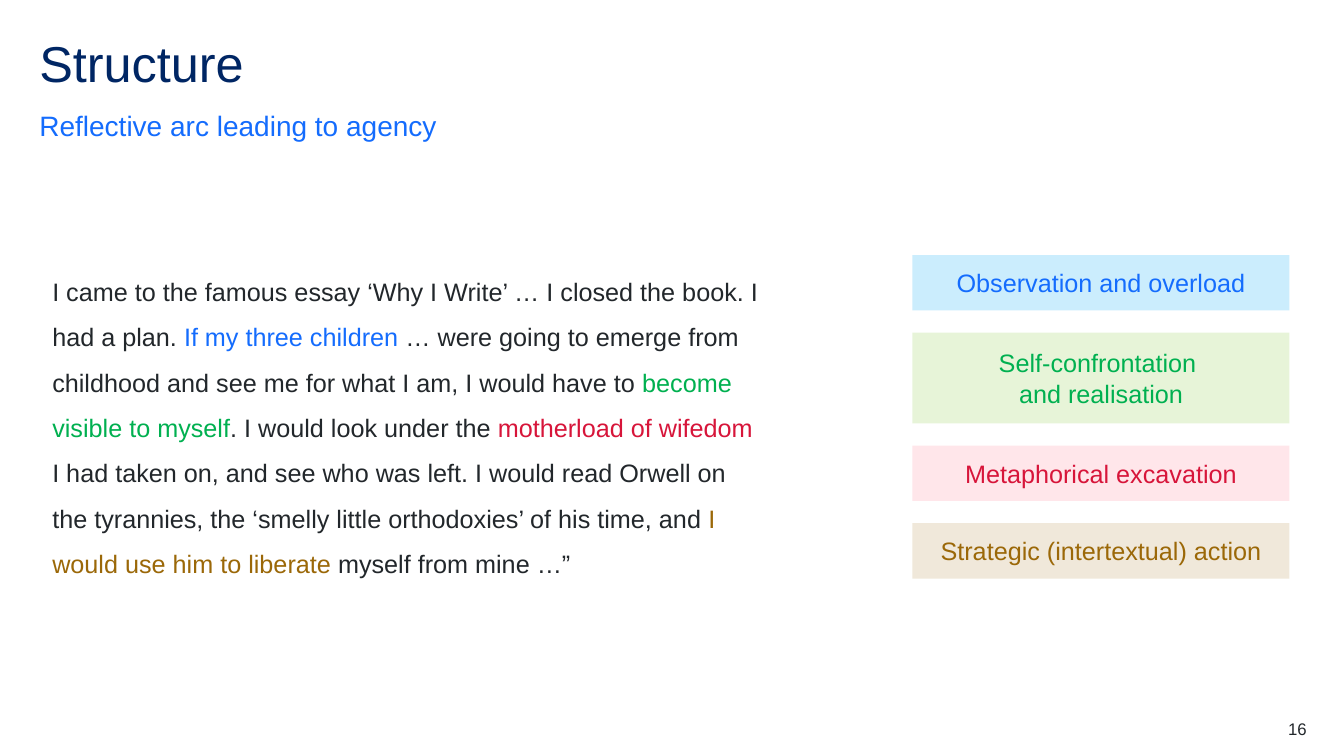
from pptx import Presentation
from pptx.dml.color import RGBColor
from pptx.enum.shapes import MSO_SHAPE
from pptx.enum.text import MSO_ANCHOR, PP_ALIGN
from pptx.oxml.ns import qn
from pptx.util import Inches, Pt
from lxml import etree

RECTANGLE = MSO_SHAPE.RECTANGLE
TOP, MIDDLE, BOTTOM = MSO_ANCHOR.TOP, MSO_ANCHOR.MIDDLE, MSO_ANCHOR.BOTTOM
LEFT, CENTER, RIGHT = PP_ALIGN.LEFT, PP_ALIGN.CENTER, PP_ALIGN.RIGHT

NAVY, INK = "002664", "22272B"
BLUE, GREEN, RED, BROWN = "146CFD", "00B050", "D7153A", "9B6808"


def rgb(value):
    return RGBColor.from_string(value)


class StructureSlide:
    font = "Arial"

    def __init__(self, presentation):
        self.slide = presentation.slides.add_slide(presentation.slide_layouts[5])

    def style_runs(self, paragraph, size, colors):
        for run, color in zip(paragraph.runs, colors):
            run.font.name = self.font
            run.font.size = Pt(size)
            run.font.bold = False
            run.font.color.rgb = rgb(color)

    def frame(self, shape, anchor, inset):
        frame = shape.text_frame
        frame.word_wrap = True
        frame.vertical_anchor = anchor
        if not inset:
            frame.margin_left = frame.margin_right = 0
            frame.margin_top = frame.margin_bottom = 0
        return frame

    def title(self, text, left, top, width, height):
        heading = self.slide.shapes.title
        heading.left, heading.top = Inches(left), Inches(top)
        heading.width, heading.height = Inches(width), Inches(height)
        frame = self.frame(heading, TOP, False)
        frame.text = text
        paragraph = frame.paragraphs[0]
        paragraph.alignment = LEFT
        paragraph.line_spacing = 0.9
        self.style_runs(paragraph, 36, [NAVY])

    def text(self, parts, left, top, width, height, size, anchor=TOP,
             align=LEFT, spacing=1.0, after=0, inset=False):
        box = self.slide.shapes.add_textbox(
            Inches(left), Inches(top), Inches(width), Inches(height))
        paragraph = self.frame(box, anchor, inset).paragraphs[0]
        paragraph.alignment = align
        paragraph.line_spacing = spacing
        paragraph.space_after = Pt(after)
        for words, _ in parts:
            paragraph.add_run().text = words
        self.style_runs(paragraph, size, [color for _, color in parts])

    def label(self, text, color, fill, opacity, left, top, width, height):
        card = self.slide.shapes.add_shape(
            RECTANGLE, Inches(left), Inches(top), Inches(width), Inches(height))
        card.shadow.inherit = False
        card.line.fill.background()
        card.fill.solid()
        card.fill.fore_color.rgb = rgb(fill)
        if opacity < 100:
            tint = card.fill._xPr.find(".//" + qn("a:srgbClr"))
            etree.SubElement(tint, qn("a:alpha")).set("val", str(opacity * 1000))
        frame = self.frame(card, MIDDLE, True)
        frame.text = text
        paragraph = frame.paragraphs[0]
        paragraph.alignment = CENTER
        self.style_runs(paragraph, 18, [color] * len(paragraph.runs))


def main():
    presentation = Presentation()
    presentation.slide_width = Inches(13.33)
    presentation.slide_height = Inches(7.5)
    structure = StructureSlide(presentation)

    structure.title("Structure", 0.39, 0.39, 12.56, 0.6)
    structure.text([("Reflective arc leading to agency", BLUE)],
                   0.39, 1.07, 12.56, 0.34, 20, anchor=BOTTOM, spacing=1.5, after=12)

    quotation = [
        ("I came to the famous essay ‘Why I Write’ … I closed the book. I had a plan. ", INK),
        ("If my three children ", BLUE),
        ("… were going to emerge from childhood and see me for what I am, "
         "I would have to ", INK),
        ("become visible to myself", GREEN),
        (". I would look under the ", INK),
        ("motherload of wifedom ", RED),
        ("I had taken on, and see who was left. I would read Orwell on the tyrannies, "
         "the ‘smelly little orthodoxies’ of his time, and ", INK),
        ("I would use him to liberate ", BROWN),
        ("myself from mine …”", INK),
    ]
    structure.text(quotation, 0.42, 2.54, 7.28, 3.25, 18,
                   spacing=1.5, after=12, inset=True)

    stages = [
        ("Observation and overload", BLUE, "CBEDFD", 100, 0.55),
        ("Self-confrontation \vand realisation", GREEN, "92D050", 22, 0.9),
        ("Metaphorical excavation", RED, "FFE6EA", 100, 0.55),
        ("Strategic (intertextual) action", BROWN, BROWN, 15, 0.55),
    ]
    stage_top, stage_gap = 2.53, 0.22
    for stage, color, fill, opacity, height in stages:
        structure.label(stage, color, fill, opacity, 9.05, stage_top, 3.74, height)
        stage_top += height + stage_gap

    structure.text([("16", INK)], 12.17, 7.13, 0.79, 0.2, 12, align=RIGHT)
    presentation.save("out.pptx")


if __name__ == "__main__":
    main()
